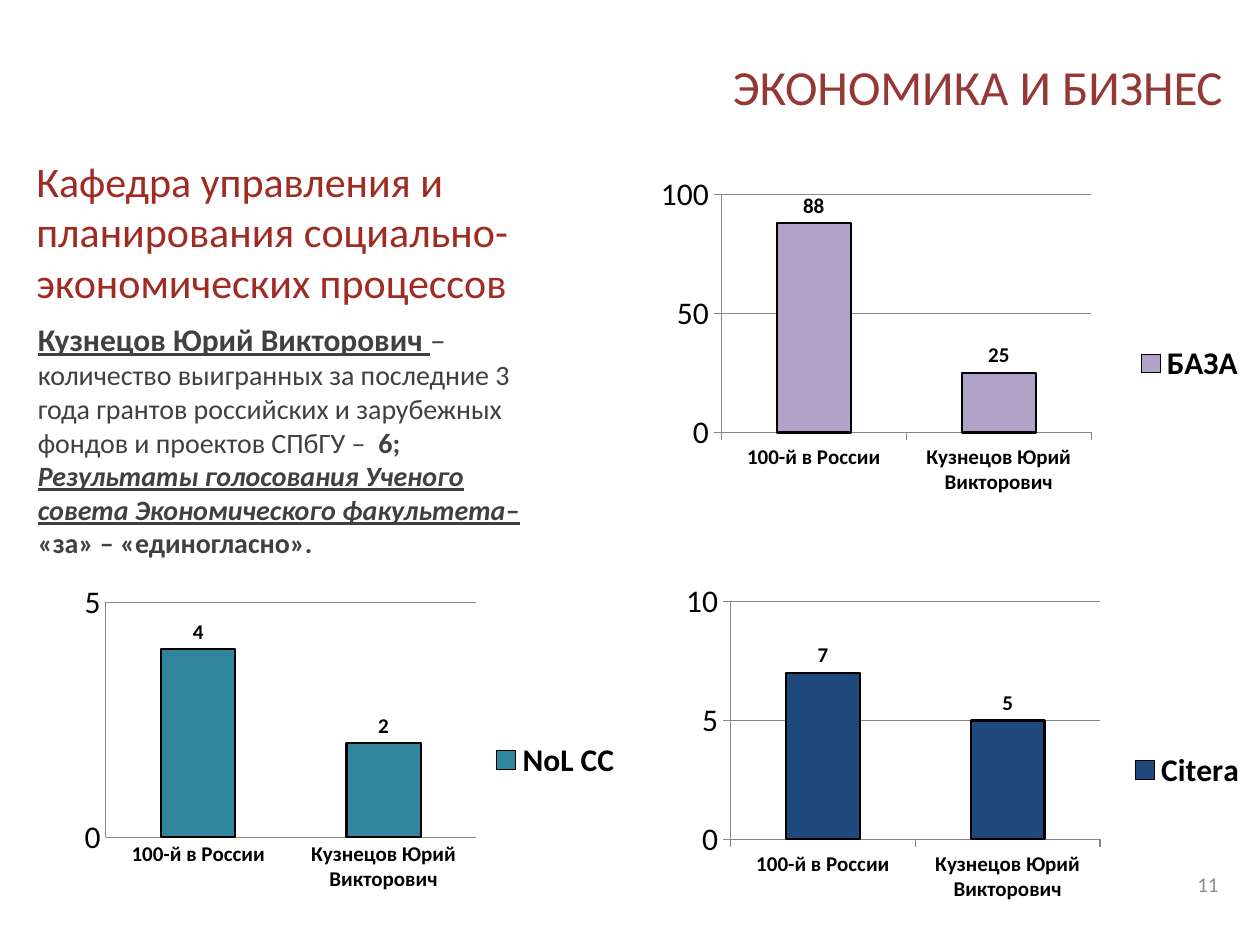
import pptx
import pptx.util
import pptx.chart.data
import pptx.dml.color
import pptx.enum.chart
import pptx.enum.text
import pptx.oxml
import pptx.oxml.ns
from dataclasses import dataclass

Pt = pptx.util.Pt
XL = pptx.enum.chart
ALIGN = pptx.enum.text.PP_ALIGN
ANCHOR = pptx.enum.text.MSO_ANCHOR
WIDTH, HEIGHT = pptx.util.Inches(10), pptx.util.Inches(7.5)


@dataclass(frozen=True)
class Theme:
    font: str = "Calibri"
    title: str = "953735"
    heading: str = "9F2B22"
    body: str = "404040"
    number: str = "8C8C8C"
    ink: str = "000000"
    grid: str = "868686"
    title_size: int = 28
    heading_size: int = 24
    name_size: int = 18
    body_size: int = 16
    small_size: int = 12


THEME = Theme()
CATEGORIES = ["100-й в России", "Кузнецов Юрий Викторович"]
CHART_SIZE = (49.2, 42)


def rgb(value):
    return pptx.dml.color.RGBColor.from_string(value)


def area(left, top, width, height):
    """Turn percentages of the slide's size into lengths."""
    return [int(side * share / 100) for side, share in
            zip((WIDTH, HEIGHT, WIDTH, HEIGHT), (left, top, width, height))]


def place(holder, box):
    holder.left, holder.top, holder.width, holder.height = box


def style(font, size, color, bold=None):
    font.name, font.size, font.bold = THEME.font, Pt(size), bold
    font.color.rgb = rgb(color)


def write(shape, paragraphs, color, align=ALIGN.LEFT, anchor=ANCHOR.MIDDLE):
    """Each paragraph is a list of (text, size, marks); marks are among b, i, u."""
    frame = shape.text_frame
    frame.word_wrap = True
    frame.auto_size = pptx.enum.text.MSO_AUTO_SIZE.NONE
    frame.vertical_anchor = anchor
    for index, runs in enumerate(paragraphs):
        paragraph = frame.add_paragraph() if index else frame.paragraphs[0]
        properties = paragraph._p.get_or_add_pPr()
        properties.set("marL", "0")
        properties.set("indent", "0")
        paragraph.alignment = align
        paragraph.space_before = Pt(0)
        properties.append(pptx.oxml.parse_xml(
            f'<a:buNone {pptx.oxml.ns.nsdecls("a")}/>'))
        for text, size, marks in runs:
            run = paragraph.add_run()
            run.text = text
            style(run.font, size, color, "b" in marks)
            run.font.italic = "i" in marks
            run.font.underline = "u" in marks


def add_label(slide, box, text, size, color, align=ALIGN.LEFT):
    write(slide.shapes.add_textbox(*box), [[(text, size, "")]], color, align)


def set_plot_layout(chart, shares):
    plot_area = chart._chartSpace.chart.plotArea
    for layout in plot_area.findall(pptx.oxml.ns.qn("c:layout")):
        plot_area.remove(layout)
    sides = "".join(f'<c:{tag} val="{share}"/>'
                    for tag, share in zip("xywh", shares))
    plot_area.insert(0, pptx.oxml.parse_xml(
        f'<c:layout {pptx.oxml.ns.nsdecls("c")}><c:manualLayout>'
        '<c:layoutTarget val="inner"/><c:xMode val="edge"/><c:yMode val="edge"/>'
        f'{sides}</c:manualLayout></c:layout>'))


def add_index_chart(slide, corner, name, values, color, top_value, step,
                    plot_shares, tick=XL.XL_TICK_MARK.OUTSIDE):
    data = pptx.chart.data.CategoryChartData()
    data.categories = CATEGORIES
    data.add_series(name, values)
    chart = slide.shapes.add_chart(
        XL.XL_CHART_TYPE.COLUMN_CLUSTERED, *area(*corner, *CHART_SIZE), data).chart
    chart.has_title = False
    style(chart.font, THEME.name_size, THEME.ink)
    set_plot_layout(chart, plot_shares)

    chart.has_legend = True
    chart.legend.position = XL.XL_LEGEND_POSITION.RIGHT
    chart.legend.include_in_layout = False
    style(chart.legend.font, THEME.name_size, THEME.ink, True)

    values_axis = chart.value_axis
    values_axis.minimum_scale, values_axis.maximum_scale = 0, top_value
    values_axis.major_unit = step
    values_axis.major_gridlines.format.line.color.rgb = rgb(THEME.grid)
    for axis in (values_axis, chart.category_axis):
        axis.major_tick_mark = tick
        axis.minor_tick_mark = XL.XL_TICK_MARK.NONE
        axis.format.line.color.rgb = rgb(THEME.grid)
    style(chart.category_axis.tick_labels.font, THEME.small_size, THEME.ink, True)

    plot = chart.plots[0]
    plot.gap_width = 150
    plot.vary_by_categories = False
    columns = plot.series[0]
    columns.format.fill.solid()
    columns.format.fill.fore_color.rgb = rgb(color)
    columns.format.line.color.rgb = rgb(THEME.ink)
    columns.format.line.width = Pt(1.25)
    labels = columns.data_labels
    labels.show_value = True
    labels.position = XL.XL_LABEL_POSITION.OUTSIDE_END
    style(labels.font, THEME.small_size, THEME.ink, True)


def main():
    deck = pptx.Presentation()
    deck.slide_width, deck.slide_height = WIDTH, HEIGHT
    slide = deck.slides.add_slide(deck.slide_layouts[1])

    title, body = slide.shapes.title, slide.placeholders[1]
    place(title, area(25.6, 4, 72.4, 10.27))
    write(title, [[("ЭКОНОМИКА И БИЗНЕС", THEME.title_size, "")]],
          THEME.title, ALIGN.RIGHT)

    place(body, area(2, 33.2, 42.5, 26.93))
    size = THEME.body_size
    write(body, [
        [("Кузнецов Юрий Викторович ", THEME.name_size, "bu"),
         ("– ", THEME.name_size, ""),
         ("количество выигранных за последние 3 года грантов российских "
          "и зарубежных фондов и проектов СПбГУ – ", size, ""),
         (" 6;", size, "b")],
        [("Результаты голосования Ученого совета Экономического факультета",
          size, "biu"), ("–", size, "bu")],
        [("«за» – «единогласно».", size, "b")],
    ], THEME.body, anchor=ANCHOR.TOP)

    add_label(slide, area(1.9, 15.73, 42.5, 17.47),
              "Кафедра управления и планирования социально-экономических процессов",
              THEME.heading_size, THEME.heading)
    add_label(slide, area(74.4, 90.93, 23.3, 5.33), "11",
              THEME.small_size, THEME.number, ALIGN.RIGHT)

    add_index_chart(slide, (50.8, 60.53), "Citera", (7, 5), "1F497D", 10, 5,
                    (0.146, 0.075, 0.596, 0.599))
    add_index_chart(slide, (1.2, 59.47), "NoL CC", (4, 2), "31859C", 5, 5,
                    (0.146, 0.102, 0.598, 0.592), XL.XL_TICK_MARK.NONE)
    add_index_chart(slide, (50.7, 17.47), "БАЗА", (88, 25), "B3A2C7", 100, 50,
                    (0.133, 0.075, 0.597, 0.599))
    deck.save("out.pptx")


if __name__ == "__main__":
    main()
